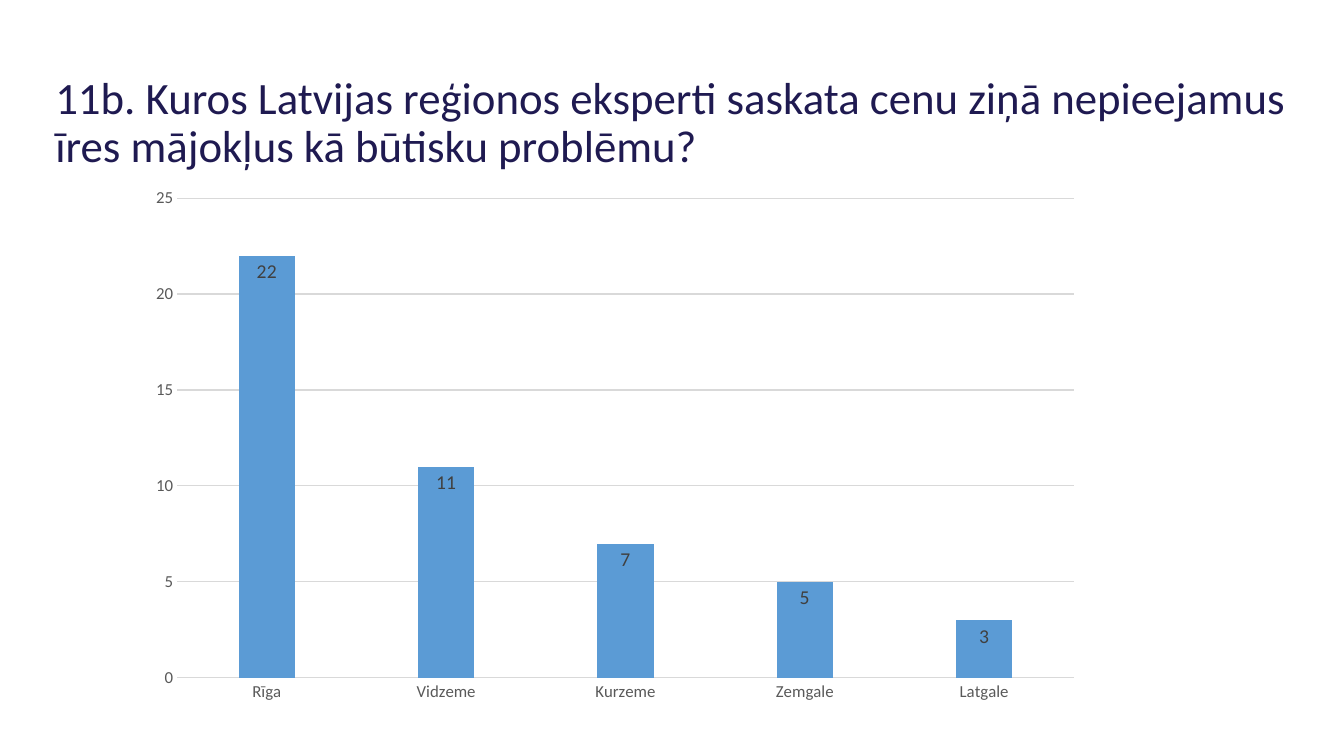
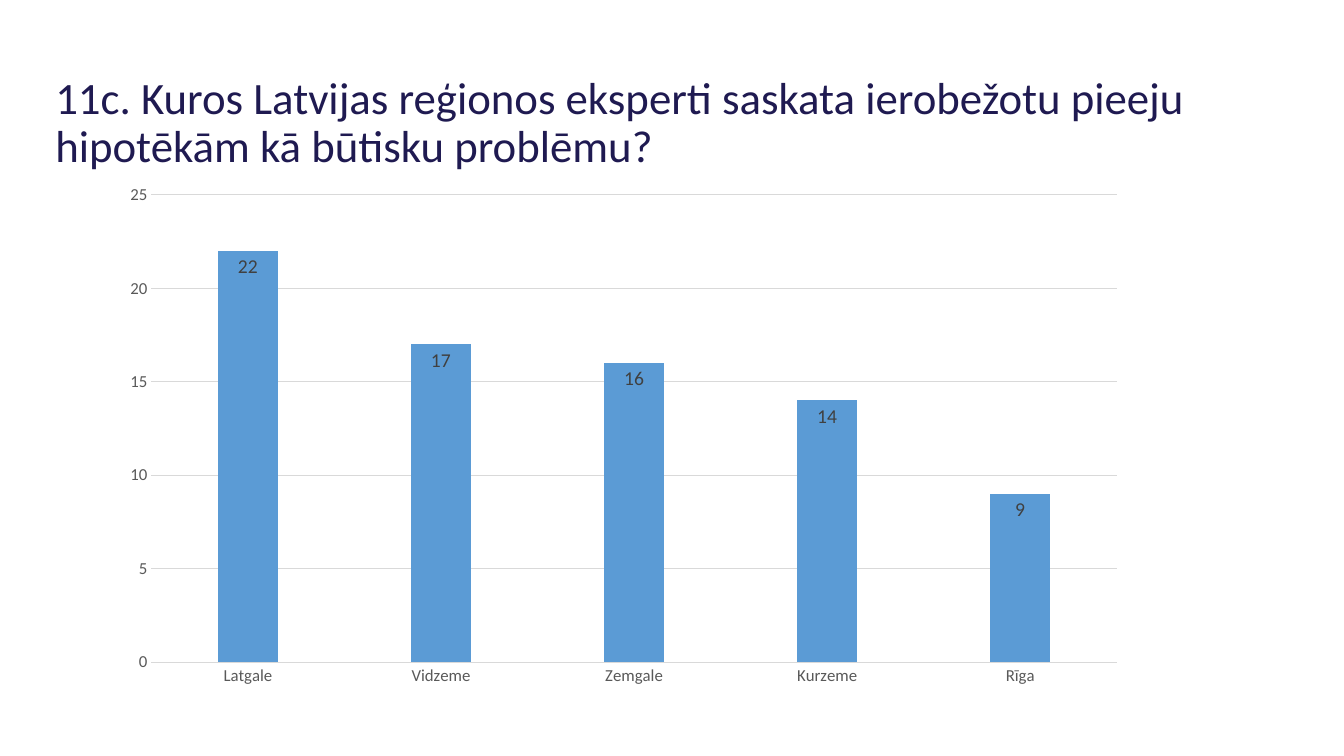
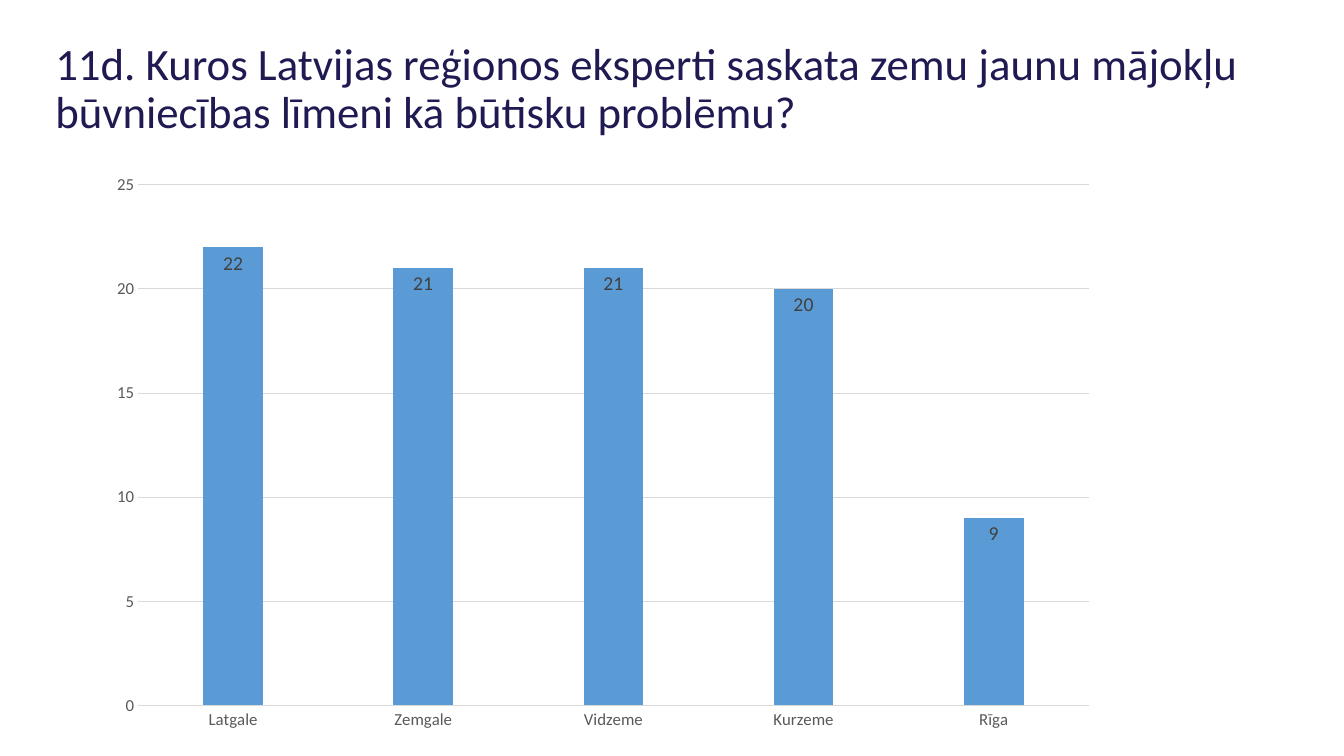
from pptx import Presentation
from pptx.chart.data import CategoryChartData
from pptx.dml.color import RGBColor
from pptx.enum.chart import XL_CHART_TYPE, XL_LABEL_POSITION, XL_TICK_MARK
from pptx.enum.text import MSO_ANCHOR
from pptx.util import Inches, Pt

FONT = "Calibri"
COLORS = {
    "title": "1F1A51",
    "bar": "5B9BD5",
    "axis": "595959",
    "label": "404040",
    "grid": "D9D9D9",
}

# Each slide: title, title top, chart box, values by region
SLIDES = [
    ("11b. Kuros Latvijas reģionos eksperti saskata cenu ziņā nepieejamus īres mājokļus kā būtisku problēmu?",
     0.65, (1.36, 1.76, 9.48, 5.31),
     {"Rīga": 22, "Vidzeme": 11, "Kurzeme": 7, "Zemgale": 5, "Latgale": 3}),
    ("11c. Kuros Latvijas reģionos eksperti saskata ierobežotu pieeju hipotēkām kā būtisku problēmu?",
     0.65, (1.09, 1.73, 10.19, 5.18),
     {"Latgale": 22, "Vidzeme": 17, "Zemgale": 16, "Kurzeme": 14, "Rīga": 9}),
    ("11d. Kuros Latvijas reģionos eksperti saskata zemu jaunu mājokļu būvniecības līmeni kā būtisku problēmu?",
     0.31, (0.96, 1.62, 10.04, 5.73),
     {"Latgale": 22, "Zemgale": 21, "Vidzeme": 21, "Kurzeme": 20, "Rīga": 9}),
]


def color(name):
    return RGBColor.from_string(COLORS[name])


def set_font(font, size, name):
    font.name = FONT
    font.size = Pt(size)
    font.color.rgb = color(name)


def set_line(line):
    line.color.rgb = color("grid")
    line.width = Pt(0.75)


def add_title(slide, text, top):
    box = slide.shapes.add_textbox(Inches(0.45), Inches(top), Inches(12.42), Inches(0.84))
    frame = box.text_frame
    frame.word_wrap = True
    frame.vertical_anchor = MSO_ANCHOR.TOP
    frame.margin_left = frame.margin_right = Inches(0.1)
    frame.margin_top = frame.margin_bottom = Inches(0.1)
    frame.text = text
    para = frame.paragraphs[0]
    para.line_spacing = 0.9
    set_font(para.runs[0].font, 32, "title")


def style_axes(chart):
    for axis in (chart.category_axis, chart.value_axis):
        axis.major_tick_mark = axis.minor_tick_mark = XL_TICK_MARK.NONE
        set_font(axis.tick_labels.font, 12, "axis")
    set_line(chart.category_axis.format.line)
    scale = chart.value_axis
    scale.minimum_scale, scale.maximum_scale, scale.major_unit = 0, 25, 5
    scale.format.line.fill.background()
    set_line(scale.major_gridlines.format.line)


def style_bars(plot):
    plot.gap_width = 219
    plot.overlap = -27
    plot.vary_by_categories = False
    bars = plot.series[0]
    bars.format.fill.solid()
    bars.format.fill.fore_color.rgb = color("bar")
    labels = bars.data_labels
    labels.show_value = True
    labels.position = XL_LABEL_POSITION.INSIDE_END
    set_font(labels.font, 14, "label")


def add_bars(slide, box, values):
    data = CategoryChartData()
    data.categories = list(values)
    data.add_series("Series 1", list(values.values()))
    chart = slide.shapes.add_chart(
        XL_CHART_TYPE.COLUMN_CLUSTERED, *map(Inches, box), data).chart
    chart.has_title = False
    chart.has_legend = False
    chart.font.name = FONT
    chart.font.size = Pt(10)
    style_axes(chart)
    style_bars(chart.plots[0])


def main():
    deck = Presentation()
    deck.slide_width = Inches(13.33)
    deck.slide_height = Inches(7.5)
    for title, top, box, values in SLIDES:
        slide = deck.slides.add_slide(deck.slide_layouts[6])
        add_title(slide, title, top)
        add_bars(slide, box, values)
    deck.save("out.pptx")


if __name__ == "__main__":
    main()
